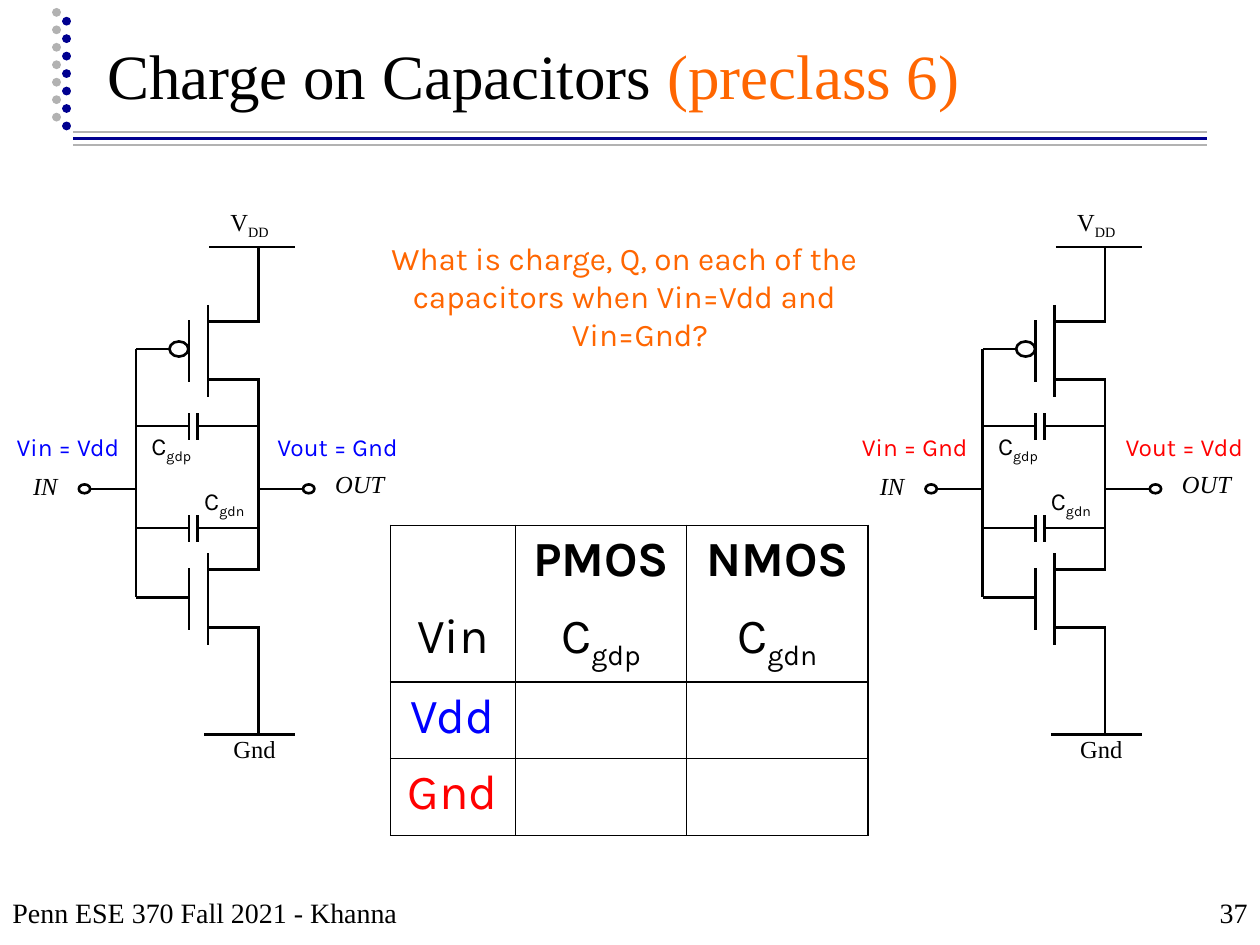
from dataclasses import dataclass

from lxml import etree
from pptx import Presentation
from pptx.dml.color import RGBColor
from pptx.enum import dml, shapes, text
from pptx.oxml import ns
from pptx.util import Inches, Pt


@dataclass(frozen=True)
class Theme:
    serif: str = "Times New Roman"
    sans: str = "Karla"
    black: str = "000000"
    white: str = "FFFFFF"
    navy: str = "000090"
    grey: str = "B2B2B2"
    orange: str = "FF6601"
    blue: str = "0000FF"
    red: str = "FF0000"
    title: int = 36
    table: int = 28
    body: int = 18
    footer: int = 16
    label: int = 14
    wire: float = 1.5


T = Theme()
CENTER, LEFT, RIGHT = text.PP_ALIGN.CENTER, text.PP_ALIGN.LEFT, text.PP_ALIGN.RIGHT


def rgb(value):
    return RGBColor.from_string(value)


def write(p, *parts, font=T.sans, size=T.label, color=T.black, align=CENTER,
          bold=False, italic=False):
    """Fill a paragraph; a part is a string or a (string, 'sub' or colour) pair."""
    p.alignment = align
    for part in parts:
        words, mark = part if isinstance(part, tuple) else (part, None)
        r = p.add_run()
        r.text = words
        f = r.font
        f.name, f.size, f.bold, f.italic = font, Pt(size), bold, italic
        f.color.rgb = rgb(color if mark in (None, "sub") else mark)
        if mark == "sub":
            r._r.get_or_add_rPr().set("baseline", "-25000")


def add_text(parent, x, y, w, h, *parts, wrap=True, anchor=text.MSO_ANCHOR.TOP, **fmt):
    tf = parent.add_textbox(Inches(x), Inches(y), Inches(w), Inches(h)).text_frame
    tf.word_wrap = wrap
    tf.vertical_anchor = anchor
    write(tf.paragraphs[0], *parts, **fmt)
    return tf


def add_line(parent, x1, y1, x2, y2, color=T.black, width=T.wire, dotted=False):
    c = parent.add_connector(shapes.MSO_CONNECTOR.STRAIGHT,
                             Inches(x1), Inches(y1), Inches(x2), Inches(y2))
    c.line.color.rgb = rgb(color)
    c.line.width = Pt(width)
    if dotted:
        c.line.dash_style = dml.MSO_LINE.ROUND_DOT
        c.line._get_or_add_ln().set("cap", "rnd")
    etree.SubElement(c._element.spPr, ns.qn("a:effectLst"))


def add_circle(parent, cx, cy, w, h):
    sp = parent.add_shape(shapes.MSO_SHAPE.OVAL, Inches(cx - w / 2), Inches(cy - h / 2),
                          Inches(w), Inches(h))
    sp.shadow.inherit = False
    sp.fill.solid()
    sp.fill.fore_color.rgb = rgb(T.white)
    sp.line.color.rgb = rgb(T.black)
    sp.line.width = Pt(T.wire)


def add_header(slide, x, y, w):
    """Title with a triple rule below it and dotted lines at its left."""
    s = slide.shapes
    for dy, color, width in ((1.1, T.navy, 2), (1.15, T.grey, 1), (1.05, T.grey, 1)):
        add_line(s, x + 0.13, y + dy, x + w, y + dy, color, width)
    for dx, dy, color in ((0, 0.01, T.grey), (0.08, 0.08, T.navy)):
        add_line(s, x + dx, y + dy + 0.92, x + dx, y + dy, color, 5, dotted=True)
    title = s.title
    title.left, title.top = Inches(x + 0.3), Inches(y + 0.11)
    title.width, title.height = Inches(8.52), Inches(0.83)
    tf = title.text_frame
    tf.vertical_anchor = text.MSO_ANCHOR.BOTTOM
    write(tf.paragraphs[0], "Charge on Capacitors ", ("(preclass 6)", T.orange),
          font=T.serif, size=T.title, align=LEFT)


def add_footer(slide, x, y, w, h):
    fmt = dict(font=T.serif, size=T.footer, anchor=text.MSO_ANCHOR.BOTTOM)
    add_text(slide.shapes, x, y, 5.42, h, "Penn ESE 370 Fall 2021 - Khanna", align=LEFT, **fmt)
    add_text(slide.shapes, x + w - 2.08, y, 2.08, h, "37", align=RIGHT, **fmt)


def add_question(slide, x, y, w, h):
    fmt = dict(size=T.body, color=T.orange)
    tf = add_text(slide.shapes, x, y, w, h,
                  "What is charge, Q, on each of the capacitors when Vin=Vdd and", **fmt)
    p = tf.add_paragraph()
    p._p.get_or_add_pPr().set("marL", str(Inches(0.25)))
    write(p, "Vin=Gnd?", **fmt)


def add_transistor(parent, x, y):
    """Gate lead, gate, channel, drain and source, from the input rail at x."""
    add_line(parent, x, y + 0.23, x + 0.42, y + 0.23)
    add_line(parent, x + 0.42, y, x + 0.42, y + 0.49)
    add_line(parent, x + 0.57, y - 0.12, x + 0.57, y + 0.61)
    for dy in (0.01, 0.47):
        add_line(parent, x + 0.57, y + dy, x + 0.98, y + dy)


def add_capacitor(parent, x, y):
    for plate, end in ((0.42, 0), (0.49, 0.97)):
        add_line(parent, x + plate, y - 0.1, x + plate, y + 0.11)
        add_line(parent, x + end, y, x + plate, y)


def add_inverter(slide, x, y, vin, vout, color):
    """CMOS inverter with gate-drain capacitors and its input and output levels."""
    g = slide.shapes.add_group_shape().shapes
    rail_in, rail_out = x + 1.08, x + 2.05
    mid, supply, ground = y + 2.29, y + 0.37, y + 4.24
    pmos, nmos = y + 0.95, y + 2.92

    for top in (pmos, nmos):
        add_transistor(g, rail_in, top)
    add_circle(g, rail_in + 0.34, pmos + 0.23, 0.15, 0.12)
    for cap in (y + 1.79, y + 2.6):
        add_capacitor(g, rail_in, cap)

    add_line(g, rail_in, pmos + 0.23, rail_in, nmos + 0.23)
    add_line(g, rail_out, supply, rail_out, pmos + 0.01)
    add_line(g, rail_out, pmos + 0.47, rail_out, nmos + 0.01)
    add_line(g, rail_out, nmos + 0.47, rail_out, ground)
    add_line(g, x + 1.66, supply, x + 2.34, supply)
    add_line(g, x + 1.62, ground, x + 2.34, ground)
    for rail, end in ((rail_in, x + 0.67), (rail_out, x + 2.45)):
        add_line(g, rail, mid, end, mid)
        add_circle(g, end, mid, 0.09, 0.07)

    add_text(g, x + 1.62, y, 0.72, 0.35, "V", ("DD", "sub"), font=T.serif)
    add_text(g, x + 1.66, y + 4.19, 0.72, 0.35, "Gnd", font=T.serif)
    add_text(g, x, y + 2.1, 0.72, 0.35, "IN", font=T.serif, italic=True)
    add_text(g, x + 2.4, y + 2.08, 0.91, 0.35, "OUT", font=T.serif, italic=True)
    add_text(g, x + 1, y + 1.78, 0.72, 0.35, "C", ("gdp", "sub"))
    add_text(g, x + 1.42, y + 2.22, 0.72, 0.26, "C", ("gdn", "sub"))
    for dx, w, level in ((0, 1.08, f"Vin = {vin}"), (2.08, 1.2, f"Vout = {vout}")):
        add_text(slide.shapes, x + dx, y + 1.79, w, 0.34, level, color=color, wrap=False)


def set_borders(cell, sides):
    tcPr = cell._tc.get_or_add_tcPr()
    for side in "LRTB":
        ln = etree.SubElement(tcPr, ns.qn(f"a:ln{side}"), w=str(Pt(1)))
        if side in sides:
            fill = etree.SubElement(ln, ns.qn("a:solidFill"))
            etree.SubElement(fill, ns.qn("a:srgbClr"), val=T.black)
        else:
            etree.SubElement(ln, ns.qn("a:noFill"))


def add_charge_table(slide, x, y, w, h):
    rows = [["", "PMOS", "NMOS"],
            ["Vin", ("C", ("gdp", "sub")), ("C", ("gdn", "sub"))],
            [("Vdd", T.blue), "", ""],
            [("Gnd", T.red), "", ""]]
    sides = ["LRT", "LRB", "LRTB", "LRTB"]
    table = slide.shapes.add_table(4, 3, Inches(x), Inches(y), Inches(w), Inches(h)).table
    table.first_row = table.horz_banding = False
    for col, width in zip(table.columns, (0.99, 1.36, 1.44)):
        col.width = Inches(width)
    for i, row in enumerate(rows):
        table.rows[i].height = Inches(h / len(rows))
        for j, value in enumerate(row):
            cell = table.cell(i, j)
            set_borders(cell, sides[i])
            cell.fill.solid()
            cell.fill.fore_color.rgb = rgb(T.white)
            if value:
                parts = value if isinstance(value[-1], tuple) else (value,)
                write(cell.text_frame.paragraphs[0], *parts, size=T.table, bold=i == 0)


def main():
    prs = Presentation()
    prs.slide_width, prs.slide_height = Inches(10), Inches(7.5)
    slide = prs.slides.add_slide(prs.slide_layouts[5])
    add_header(slide, 0.45, 0, 9.13)
    add_footer(slide, 0, 6.92, 10, 0.5)
    add_question(slide, 2.5, 1.85, 4.91, 1.01)
    add_inverter(slide, 0, 1.59, "Vdd", "Gnd", T.blue)
    add_charge_table(slide, 3.1, 4.17, 3.79, 2.44)
    add_inverter(slide, 6.72, 1.59, "Gnd", "Vdd", T.red)
    prs.save("out.pptx")


if __name__ == "__main__":
    main()
